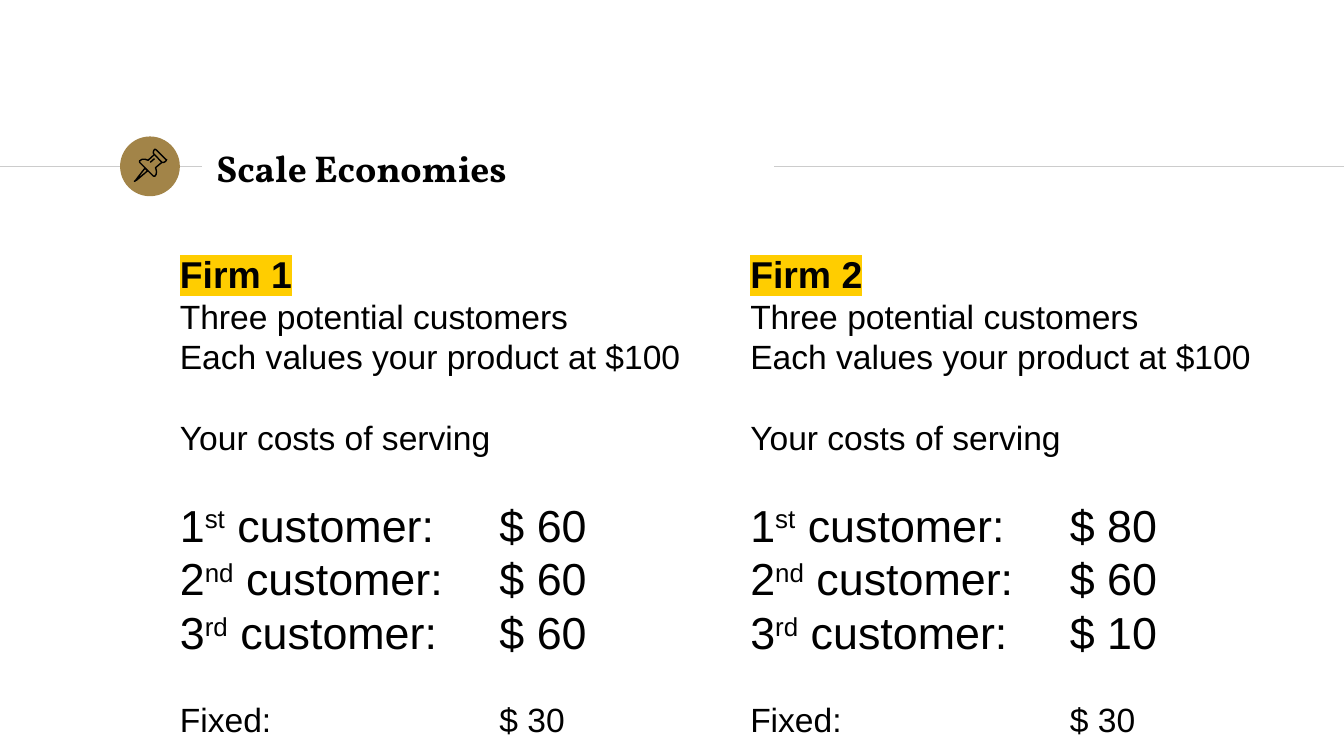
from dataclasses import dataclass

from lxml.etree import SubElement
from pptx import Presentation
from pptx.dml.color import RGBColor
from pptx.enum.shapes import MSO_CONNECTOR, MSO_SHAPE
from pptx.enum.text import MSO_ANCHOR, MSO_AUTO_SIZE, PP_ALIGN
from pptx.oxml import parse_xml
from pptx.oxml.ns import nsdecls, qn
from pptx.util import Cm, Pt

BLACK, GOLD, GREY, YELLOW = "000000", "A28448", "CCCCCC", "FFCD00"
INSET = Cm(0.25)
HANGING = Cm(0.96)
TAB = Cm(2.54)
RULE_Y = 3.15
BLOCK_GAP = 21.5


@dataclass
class Firm:
    name: str
    left: float
    costs: tuple[int, int, int]
    fixed: int


@dataclass
class Outline:
    points: list[tuple[int, int]]  # hundredths of a centimetre
    closed: bool = False


FIRMS = [
    Firm("Firm 1", 3.15, (60, 60, 60), 30),
    Firm("Firm 2", 13.93, (80, 60, 10), 30),
]

PUSHPIN = [
    # needle
    Outline([(274, 318), (257, 340), (254, 343), (259, 340), (279, 323)], True),
    # cap
    Outline([(292, 292), (306, 307), (310, 307), (313, 305), (315, 302), (313, 301),
             (296, 284), (293, 282), (291, 284), (290, 287), (290, 290)], True),
    # body
    Outline([(292, 292), (280, 303), (274, 301), (269, 301), (264, 304), (264, 307),
             (290, 333), (293, 333), (295, 330), (296, 325), (295, 320), (294, 317),
             (306, 307)]),
    # glint
    Outline([(284, 307), (292, 300)]),
]


def rgb(color: str) -> RGBColor:
    return RGBColor.from_string(color)


def set_frame(tf, anchor) -> None:
    tf.word_wrap = True
    tf.auto_size = MSO_AUTO_SIZE.NONE
    tf.vertical_anchor = anchor
    tf.margin_left = tf.margin_right = tf.margin_top = tf.margin_bottom = INSET


def style_run(r, size: float, font: str = "Arial", bold: bool = False) -> None:
    r.font.size, r.font.name, r.font.bold = Pt(size), font, bold
    r.font.color.rgb = rgb(BLACK)


def highlight(r, color: str) -> None:
    fill = r.font._element.find(qn("a:solidFill"))
    fill.addnext(parse_xml(
        f'<a:highlight {nsdecls("a")}><a:srgbClr val="{color}"/></a:highlight>'))


def add_rule(slide, x1: float, x2: float) -> None:
    line = slide.shapes.add_connector(
        MSO_CONNECTOR.STRAIGHT, Cm(x1), Cm(RULE_Y), Cm(x2), Cm(RULE_Y))
    line.line.color.rgb = rgb(GREY)
    line.line.width = Pt(0.75)
    SubElement(line._element.spPr, qn("a:effectLst"))


def add_pushpin(slide) -> None:
    parts = []
    for outline in PUSHPIN:
        start, *rest = outline.points
        builder = slide.shapes.build_freeform(*start, scale=Cm(0.01))
        builder.add_line_segments(rest, close=outline.closed)
        sp = builder.convert_to_shape()
        sp.shadow.inherit = False
        sp.fill.background()
        sp.line.color.rgb = rgb(BLACK)
        sp.line.width = Pt(0.75)
        parts.append(sp)
    slide.shapes.add_group_shape(parts)


def add_line(tf, texts: list[str], size: float = 18, before: float = 0):
    """Fill the first paragraph, or add one; the second text is superscript."""
    p = tf.paragraphs[0] if not tf.text else tf.add_paragraph()
    p.space_before = Pt(before)
    pPr = p._p.get_or_add_pPr()
    pPr.set("marL", str(HANGING))
    pPr.set("indent", str(-HANGING))
    pPr.set("defTabSz", str(TAB))
    for i, text in enumerate(texts):
        r = p.add_run()
        r.text = text
        style_run(r, size)
        if i == 1:
            r.font._element.set("baseline", "30000")
    return p


def add_firm(slide, firm: Firm) -> None:
    box = slide.shapes.add_textbox(Cm(firm.left), Cm(4.5), Cm(10.21), Cm(8.97))
    tf = box.text_frame
    set_frame(tf, MSO_ANCHOR.TOP)

    r = add_line(tf, [firm.name], 20).runs[0]
    r.font.bold = True
    highlight(r, YELLOW)

    add_line(tf, ["Three potential customers"])
    add_line(tf, ["Each values your product at $100"])
    add_line(tf, ["Your costs of serving"], before=BLOCK_GAP)
    for n, (suffix, cost) in enumerate(zip(("st", "nd", "rd"), firm.costs), 1):
        add_line(tf, [str(n), suffix, f" customer:\t$ {cost}"], 24,
                 BLOCK_GAP if n == 1 else 0)
    add_line(tf, [f"Fixed: \t\t$ {firm.fixed}"], before=BLOCK_GAP)


def main() -> None:
    prs = Presentation()
    prs.slide_width, prs.slide_height = Cm(25.4), Cm(14.29)
    slide = prs.slides.add_slide(prs.slide_layouts[5])

    # Header rules and badge
    add_rule(slide, 0, 3.82)
    add_rule(slide, 14.63, 25.4)
    badge = slide.shapes.add_shape(
        MSO_SHAPE.OVAL, Cm(2.27), Cm(2.58), Cm(1.13), Cm(1.13))
    badge.shadow.inherit = False
    badge.fill.solid()
    badge.fill.fore_color.rgb = rgb(GOLD)
    badge.line.fill.background()
    add_pushpin(slide)

    # Title
    title = slide.shapes.title
    title.left, title.top = Cm(3.84), Cm(2.55)
    title.width, title.height = Cm(10.77), Cm(1.22)
    tf = title.text_frame
    tf.text = "Scale Economies"
    set_frame(tf, MSO_ANCHOR.MIDDLE)
    tf.paragraphs[0].alignment = PP_ALIGN.LEFT
    style_run(tf.paragraphs[0].runs[0], 20, "Vollkorn", True)

    # The two firms side by side
    for firm in FIRMS:
        add_firm(slide, firm)

    prs.save("out.pptx")


if __name__ == "__main__":
    main()
